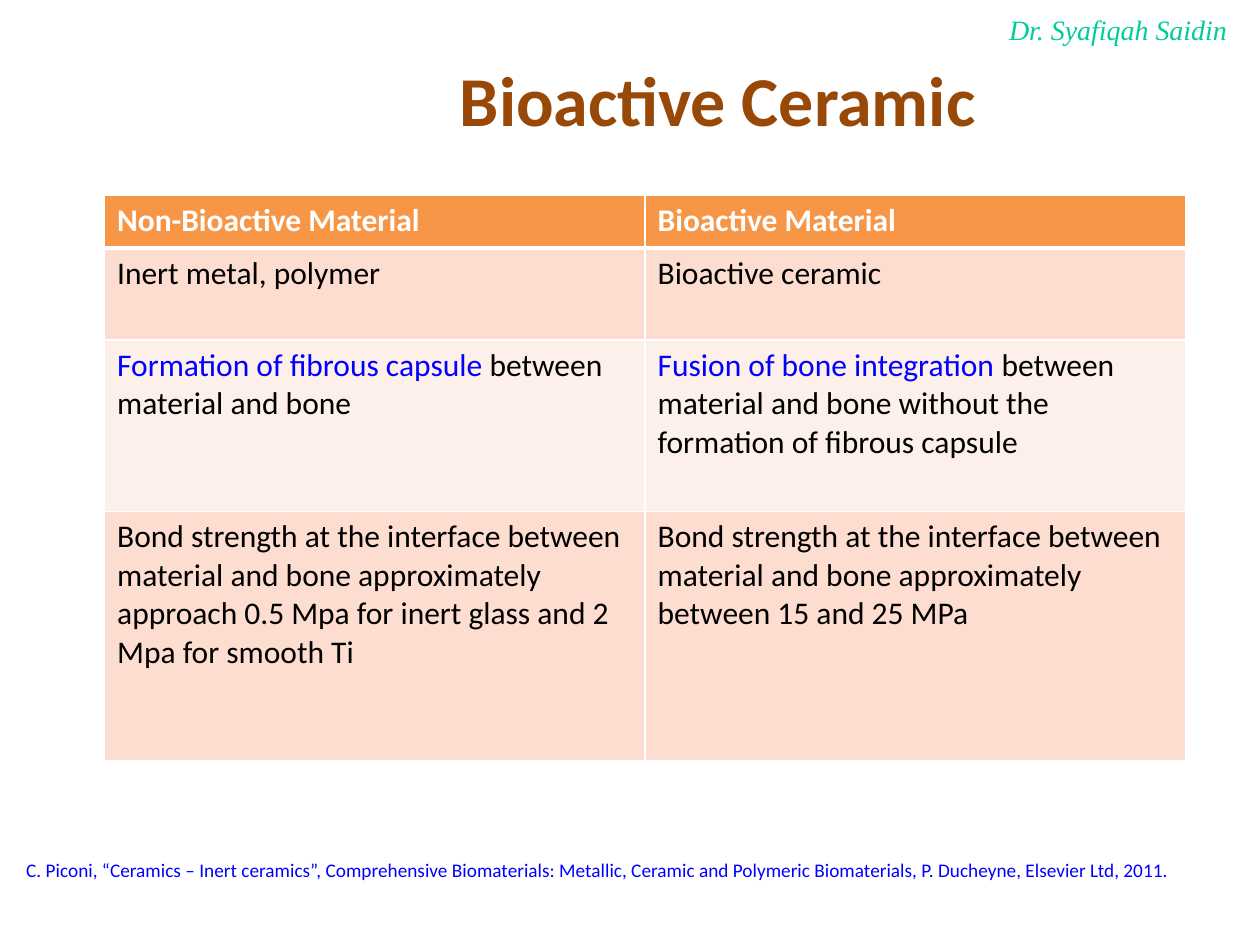
"""Build the Bioactive Ceramic comparison slide."""
from dataclasses import dataclass

from lxml.etree import SubElement
from pptx import Presentation
from pptx.dml.color import RGBColor
from pptx.enum.text import MSO_ANCHOR, MSO_AUTO_SIZE, PP_ALIGN
from pptx.oxml.ns import qn
from pptx.util import Inches, Pt

COLOURS = {
    "title": "984807",
    "author": "00CC99",
    "highlight": "0000FF",
    "text": "000000",
    "white": "FFFFFF",
    "header": "F79646",
    "band": "FCDDCF",
    "light band": "FDEFE9",
}


@dataclass(frozen=True)
class Style:
    colour: str
    size: float
    font: str = "Calibri"
    bold: bool = False
    italic: bool = False


@dataclass(frozen=True)
class Span:
    text: str
    style: Style


@dataclass(frozen=True)
class Row:
    height: float
    fill: str
    cells: tuple[tuple[Span, ...], ...]


@dataclass(frozen=True)
class Label:
    place: tuple[float, float, float, float]
    span: Span
    wrap: bool = False


HEADING = Style("white", 18, bold=True)
BODY = Style("text", 18)
HIGHLIGHT = Style("highlight", 18)

TITLE = Label((3.55, 0.4, 4.34, 0.77), Span("Bioactive Ceramic", Style("title", 40, bold=True)))
AUTHOR = Label(
    (7.91, 0.05, 2.01, 0.37),
    Span("Dr. Syafiqah Saidin", Style("author", 16, "Times New Roman", italic=True)),
)
CITATION = Label(
    (0.11, 6.76, 9.52, 0.29),
    Span(
        "C. Piconi, “Ceramics – Inert ceramics”, Comprehensive Biomaterials: Metallic, "
        "Ceramic and Polymeric Biomaterials, P. Ducheyne, Elsevier Ltd, 2011.",
        Style("highlight", 11),
    ),
    wrap=True,
)
BOND = "Bond strength at the interface between material and bone approximately "
ROWS = (
    Row(0.42, "header", (
        (Span("Non-Bioactive Material", HEADING),),
        (Span("Bioactive Material", HEADING),),
    )),
    Row(0.73, "band", (
        (Span("Inert metal, polymer", BODY),),
        (Span("Bioactive ceramic", BODY),),
    )),
    Row(1.36, "light band", (
        (Span("Formation of fibrous capsule ", HIGHLIGHT),
         Span("between material and bone", BODY)),
        (Span("Fusion of bone integration ", HIGHLIGHT),
         Span("between material and bone without the formation of fibrous capsule", BODY)),
    )),
    Row(1.98, "band", (
        (Span(BOND + "approach 0.5 Mpa for inert glass and 2 Mpa for smooth Ti", BODY),),
        (Span(BOND + "between 15 and 25 MPa", BODY),),
    )),
)
COLUMN_WIDTH = 4.29


def rgb(name: str) -> RGBColor:
    return RGBColor.from_string(COLOURS[name])


def write_spans(paragraph, spans: tuple[Span, ...]) -> None:
    for span in spans:
        run = paragraph.add_run()
        run.text = span.text
        font = run.font
        font.name = span.style.font
        font.size = Pt(span.style.size)
        font.bold = span.style.bold
        font.italic = span.style.italic
        font.color.rgb = rgb(span.style.colour)


def fill_label(box, label: Label) -> None:
    box.left, box.top, box.width, box.height = map(Inches, label.place)
    frame = box.text_frame
    frame.word_wrap = label.wrap
    frame.auto_size = MSO_AUTO_SIZE.SHAPE_TO_FIT_TEXT
    frame.vertical_anchor = MSO_ANCHOR.TOP
    paragraph = frame.paragraphs[0]
    paragraph.alignment = PP_ALIGN.LEFT
    write_spans(paragraph, (label.span,))


def add_label(page, label: Label) -> None:
    fill_label(page.shapes.add_textbox(*map(Inches, label.place)), label)


def add_borders(cell, top: float, bottom: float) -> None:
    properties = cell._tc.get_or_add_tcPr()
    for side, width in (("L", 1), ("R", 1), ("T", top), ("B", bottom)):
        line = SubElement(properties, qn(f"a:ln{side}"), w=str(Pt(width)))
        solid = SubElement(line, qn("a:solidFill"))
        SubElement(solid, qn("a:srgbClr"), val=COLOURS["white"])


def add_comparison(page, rows: tuple[Row, ...]) -> None:
    columns = len(rows[0].cells)
    table = page.shapes.add_table(
        len(rows), columns, Inches(0.83), Inches(1.55),
        Inches(COLUMN_WIDTH * columns), Inches(sum(row.height for row in rows)),
    ).table
    for column in table.columns:
        column.width = Inches(COLUMN_WIDTH)
    for index, row in enumerate(rows):
        table.rows[index].height = Inches(row.height)
        for cell, spans in zip(table.rows[index].cells, row.cells):
            add_borders(cell, top=3 if index == 1 else 1, bottom=3 if index == 0 else 1)
            cell.fill.solid()
            cell.fill.fore_color.rgb = rgb(row.fill)
            write_spans(cell.text_frame.paragraphs[0], spans)


def main() -> None:
    deck = Presentation()
    deck.slide_width, deck.slide_height = Inches(10), Inches(7.5)
    page = deck.slides.add_slide(deck.slide_layouts[5])
    fill_label(page.shapes.title, TITLE)
    add_label(page, AUTHOR)
    add_comparison(page, ROWS)
    add_label(page, CITATION)
    deck.save("out.pptx")


if __name__ == "__main__":
    main()
